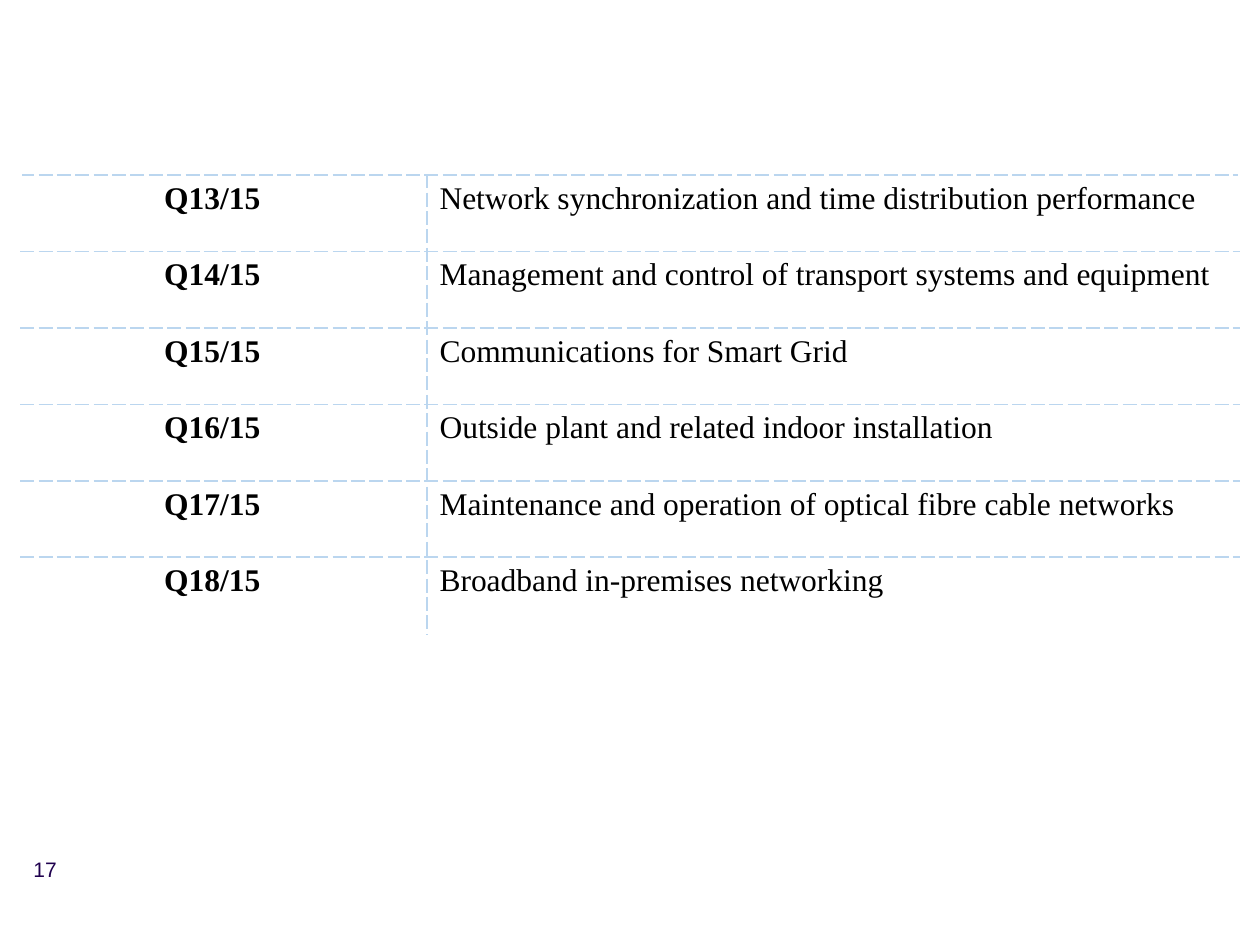
from lxml import etree
from pptx import Presentation
from pptx.dml.color import RGBColor
from pptx.enum.text import MSO_ANCHOR, PP_ALIGN
from pptx.oxml.ns import qn
from pptx.util import Pt

CENTER, LEFT = PP_ALIGN.CENTER, PP_ALIGN.LEFT
TOP = MSO_ANCHOR.TOP

THEME = {
    "border": "BBD6EF",
    "question": {"name": "Times New Roman", "size": Pt(18), "color": "000000"},
    "number": {"name": "Arial", "size": Pt(12), "color": "1F004E"},
}

QUESTIONS = [
    ("Q13/15", "Network synchronization and time distribution performance"),
    ("Q14/15", "Management and control of transport systems and equipment"),
    ("Q15/15", "Communications for Smart Grid"),
    ("Q16/15", "Outside plant and related indoor installation"),
    ("Q17/15", "Maintenance and operation of optical fibre cable networks"),
    ("Q18/15", "Broadband in-premises networking"),
]
COLUMNS = [
    {"width": 232, "left": 3.6, "right": 17, "align": CENTER, "bold": True, "side": "lnR"},
    {"width": 464, "left": 7.2, "right": 3.6, "align": LEFT, "bold": False, "side": "lnL"},
]
TABLE_LEFT, TABLE_TOP, ROW_HEIGHT = 12, 100, 43.7


def format_font(font, values, bold=False):
    for name, value in {**values, "bold": bold}.items():
        if name == "color":
            font.color.rgb = RGBColor.from_string(value)
        else:
            setattr(font, name, value)


def add_borders(cell, edges):
    properties = cell._tc.get_or_add_tcPr()
    for position, edge in enumerate(edges):
        line = etree.Element(qn(f"a:{edge}"), w=str(Pt(1)))
        fill = etree.SubElement(line, qn("a:solidFill"))
        etree.SubElement(fill, qn("a:srgbClr"), val=THEME["border"])
        etree.SubElement(line, qn("a:prstDash"), val="dash")
        properties.insert(position, line)


presentation = Presentation()
presentation.slide_width, presentation.slide_height = Pt(720), Pt(540)
slide = presentation.slides.add_slide(presentation.slide_layouts[6])

# Slide number
number_box = slide.shapes.add_textbox(Pt(12), Pt(486), Pt(54), Pt(37.5))
number_box.text_frame.word_wrap = True
paragraph = number_box.text_frame.paragraphs[0]
paragraph.text = "17"
format_font(paragraph.runs[0].font, THEME["number"])

# Question table
table = slide.shapes.add_table(
    len(QUESTIONS), len(COLUMNS), Pt(TABLE_LEFT), Pt(TABLE_TOP),
    Pt(sum(column["width"] for column in COLUMNS)), Pt(ROW_HEIGHT * len(QUESTIONS)),
).table
table.first_row = table.horz_banding = False
for index, column in enumerate(COLUMNS):
    table.columns[index].width = Pt(column["width"])

for row, texts in enumerate(QUESTIONS):
    table.rows[row].height = Pt(ROW_HEIGHT)
    is_last = row == len(QUESTIONS) - 1
    for index, (text, column) in enumerate(zip(texts, COLUMNS)):
        cell = table.cell(row, index)
        cell_format = {
            "margin_left": Pt(column["left"]), "margin_right": Pt(column["right"]),
            "margin_top": Pt(3.6), "margin_bottom": Pt(3.6), "vertical_anchor": TOP,
        }
        for name, value in cell_format.items():
            setattr(cell, name, value)
        cell.fill.background()
        add_borders(cell, [column["side"], "lnT"] + ([] if is_last else ["lnB"]))
        paragraph = cell.text_frame.paragraphs[0]
        paragraph.text = text
        paragraph.alignment = column["align"]
        format_font(paragraph.runs[0].font, THEME["question"], column["bold"])

presentation.save("out.pptx")
